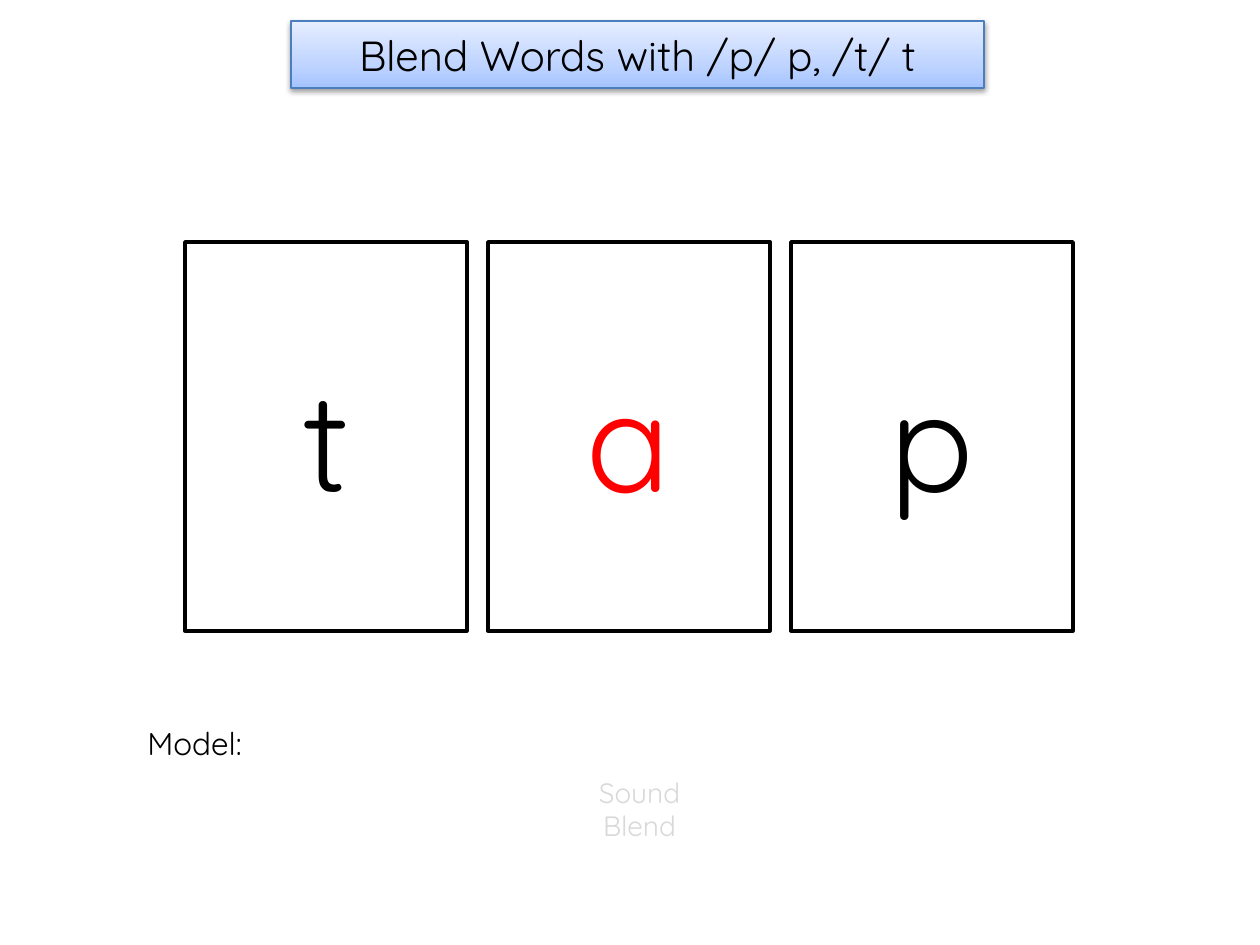
"""Build a phonics slide that blends letter cards into a word."""
import pptx
import pptx.dml.color
import pptx.enum.shapes
import pptx.enum.text
import pptx.oxml
import pptx.oxml.ns
import pptx.util
from dataclasses import dataclass

HEADING = "Blend Words with /p/ p, /t/ t"
CARDS = [("t", "black"), ("a", "red"), ("p", "black")]
LABELS = [
    (["Sound", "Blend"], (43, 769, 1193, 81), "hint", "faint", "CENTER"),
    (["Model:"], (135, 718, 183, 50), "label", "black", "LEFT"),
]
PAGE_SIZE = (1260, 945)
HEADING_BOX = (291, 21, 693, 67)
CARD_BOX = (185, 242, 282, 389)
CARD_GAP = 21


@dataclass(frozen=True)
class Theme:
    font: str = "Quicksand"
    black: str = "000000"
    red: str = "FF0000"
    faint: str = "D9D9D9"
    white: str = "FFFFFF"
    border: str = "4B7EBC"
    gradient: tuple = ((0, "A4C4FF"), (35, "BFD4FF"), (100, "E6EEFF"))
    heading: int = 24
    hint: int = 16
    label: int = 18
    letter: int = 80
    thin: float = 0.75
    thick: float = 2


THEME = Theme()


def px(length):
    return pptx.util.Emu(round(length * 914400 / 126))


def rgb(value):
    return pptx.dml.color.RGBColor.from_string(value)


def place(shape, box):
    shape.left, shape.top, shape.width, shape.height = map(px, box)


def outline(shape, color, width):
    shape.line.color.rgb = rgb(color)
    shape.line.width = pptx.util.Pt(width)


def write(shape, lines, size, color=THEME.black, align="CENTER", anchor="MIDDLE"):
    frame = shape.text_frame
    frame.word_wrap = True
    frame.auto_size = pptx.enum.text.MSO_AUTO_SIZE.NONE
    frame.vertical_anchor = pptx.enum.text.MSO_ANCHOR[anchor]
    for index, line in enumerate(lines):
        para = frame.add_paragraph() if index else frame.paragraphs[0]
        para.alignment = pptx.enum.text.PP_ALIGN[align]
        span = para.add_run()
        span.text = line
        span.font.name = THEME.font
        span.font.size = pptx.util.Pt(size)
        span.font.color.rgb = rgb(color)


def append_property(shape, markup):
    namespace = pptx.oxml.ns.nsdecls("a")
    element = pptx.oxml.parse_xml(markup.replace(">", f" {namespace}>", 1))
    shape.element.spPr.append(element)


def add_heading(page):
    banner = page.shapes.title
    place(banner, HEADING_BOX)
    stops = "".join(
        f'<a:gs pos="{stop * 1000}"><a:srgbClr val="{color}"/></a:gs>'
        for stop, color in THEME.gradient
    )
    append_property(banner, '<a:prstGeom prst="roundRect"><a:avLst/></a:prstGeom>')
    append_property(
        banner,
        f'<a:gradFill rotWithShape="1"><a:gsLst>{stops}</a:gsLst>'
        '<a:lin ang="16200000" scaled="0"/></a:gradFill>',
    )
    outline(banner, THEME.border, THEME.thin)
    append_property(
        banner,
        '<a:effectLst><a:outerShdw blurRad="40000" dist="20000" dir="5400000" '
        f'rotWithShape="0"><a:srgbClr val="{THEME.black}"><a:alpha val="38000"/>'
        "</a:srgbClr></a:outerShdw></a:effectLst>",
    )
    write(banner, [HEADING], THEME.heading)


def add_cards(page):
    left, top, width, height = CARD_BOX
    for index, (letter, color) in enumerate(CARDS):
        box = (left + index * (width + CARD_GAP), top, width, height)
        card = page.shapes.add_shape(
            pptx.enum.shapes.MSO_SHAPE.RECTANGLE, *map(px, box)
        )
        card.shadow.inherit = False
        card.fill.solid()
        card.fill.fore_color.rgb = rgb(THEME.white)
        outline(card, THEME.black, THEME.thick)
        write(card, [letter], THEME.letter, getattr(THEME, color))


def add_labels(page):
    for lines, box, size, color, align in LABELS:
        label = page.shapes.add_textbox(*map(px, box))
        write(label, lines, getattr(THEME, size), getattr(THEME, color), align, "TOP")


def main():
    deck = pptx.Presentation()
    deck.slide_width, deck.slide_height = map(px, PAGE_SIZE)
    page = deck.slides.add_slide(deck.slide_layouts.get_by_name("Title Only"))
    add_heading(page)
    add_labels(page)
    add_cards(page)
    deck.save("out.pptx")


if __name__ == "__main__":
    main()
